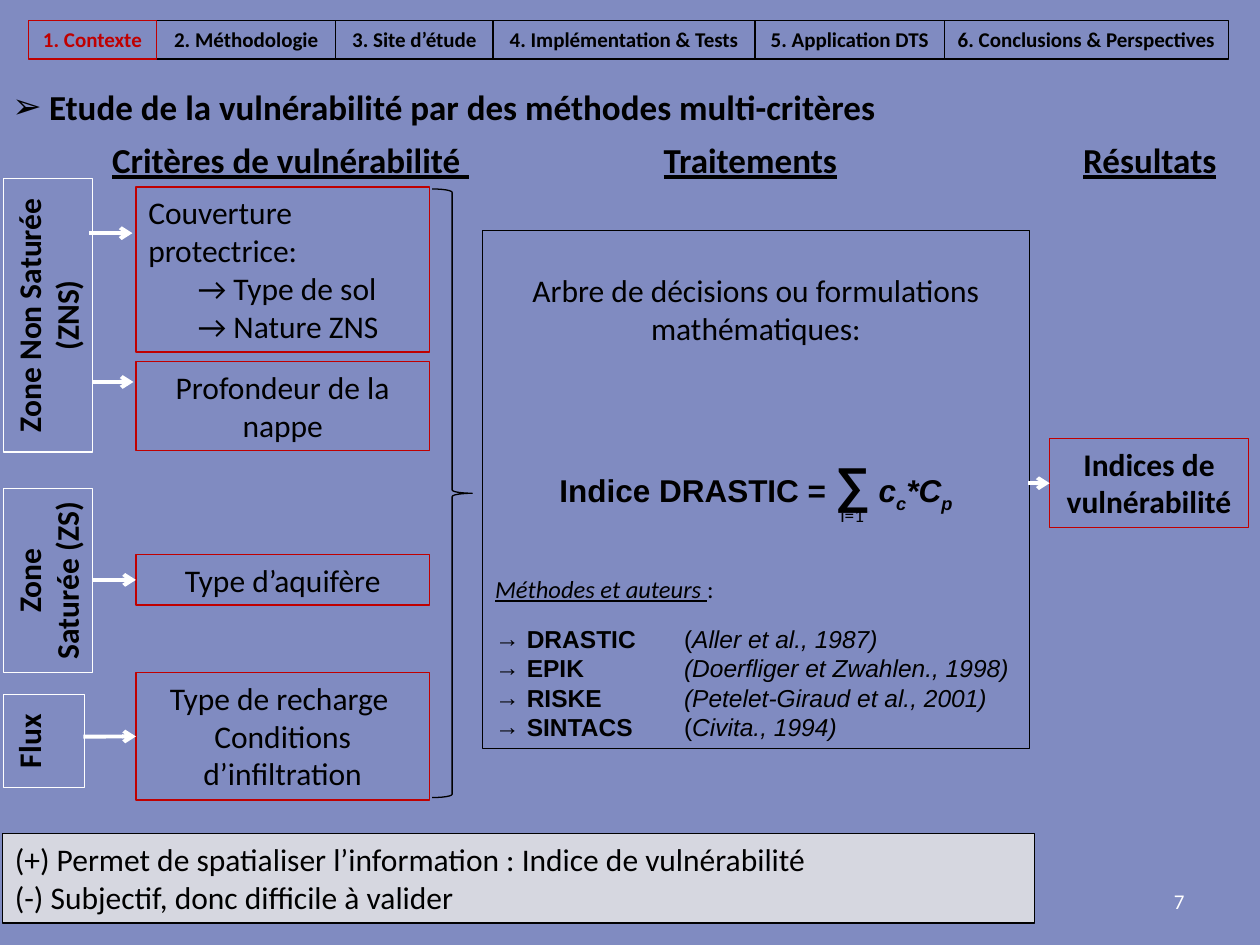
from lxml import etree
from pptx import Presentation
from pptx import util as u
from pptx.dml.color import RGBColor
from pptx.enum import shapes, text
from pptx.oxml import ns

BACKGROUND = RGBColor(0x80, 0x8B, 0xC1)
BLACK = RGBColor(0, 0, 0)
WHITE = RGBColor(255, 255, 255)
RED = RGBColor(0xC0, 0, 0)
GREY = RGBColor(0xD6, 0xD7, 0xE0)
CENTER = text.PP_ALIGN.CENTER
LEFT = text.PP_ALIGN.LEFT
RIGHT = text.PP_ALIGN.RIGHT


def add_xml(parent, tag, **attributes):
    return etree.SubElement(parent, ns.qn(tag), attributes)


class Page:
    def __init__(self, deck):
        self.slide = deck.slides.add_slide(deck.slide_layouts[6])
        fill = self.slide.background.fill
        fill.solid()
        fill.fore_color.rgb = BACKGROUND

    def paragraph(self, frame, content, size=18, font="Calibri", color=BLACK, bold=None,
                  italic=None, underline=None, align=LEFT, before=0, indent=0, bullet=None, tab=None):
        first = frame.paragraphs[0]
        para = frame.add_paragraph() if first.runs else first
        para.alignment = align
        props = para._p.get_or_add_pPr()
        if indent:
            props.set("marL", str(u.Cm(indent)))
        if bullet:
            props.set("indent", str(-u.Cm(indent)))
            add_xml(props, "a:buFont", typeface="Arial")
            add_xml(props, "a:buChar", char=bullet)
        if tab:
            add_xml(add_xml(props, "a:tabLst"), "a:tab", pos=str(u.Cm(tab)), algn="l")
        if before:
            para.space_before = u.Pt(before)
        para.font.size, para.font.name = u.Pt(size), font
        para.font.color.rgb = color
        para.font.bold, para.font.italic, para.font.underline = bold, italic, underline
        for words, style in [(content, {})] if isinstance(content, str) else content:
            span = para.add_run()
            span.text = words
            for name, value in style.items():
                if name == "baseline":
                    span._r.get_or_add_rPr().set(name, str(value))
                else:
                    setattr(span.font, name, value)

    def label(self, left, top, width, height, content, **style):
        box = self.slide.shapes.add_textbox(u.Cm(left), u.Cm(top), u.Cm(width), u.Cm(height))
        box.text_frame.word_wrap = True
        self.paragraph(box.text_frame, content, **style)
        return box

    def shape(self, left, top, width, height, line=BLACK, fill=None, kind=shapes.MSO_SHAPE.RECTANGLE):
        box = self.slide.shapes.add_shape(kind, u.Cm(left), u.Cm(top), u.Cm(width), u.Cm(height))
        box.shadow.inherit = False
        box.line.color.rgb = line
        box.line.width = u.Pt(0.75)
        if fill is None:
            box.fill.background()
        else:
            box.fill.solid()
            box.fill.fore_color.rgb = fill
        return box

    def box(self, left, top, width, height, *lines, line=BLACK, fill=None, wrap=True, **style):
        box = self.shape(left, top, width, height, line, fill)
        box.text_frame.word_wrap = wrap
        box.text_frame.vertical_anchor = text.MSO_ANCHOR.TOP
        for content in lines:
            self.paragraph(box.text_frame, content, **style)
        return box

    def upright_box(self, left, top, width, height, content):
        box = self.box(left + (width - height) / 2, top + (height - width) / 2, height, width,
                       content, line=WHITE, bold=True, align=CENTER)
        box.rotation = 270
        return box

    def arrow(self, start, end, y, target=None):
        arrow = self.slide.shapes.add_connector(
            shapes.MSO_CONNECTOR.STRAIGHT, u.Cm(start), u.Cm(y), u.Cm(end), u.Cm(y))
        if target is not None:
            arrow.end_connect(target, 1)
        arrow.line.color.rgb = WHITE
        arrow.line.width = u.Pt(2.25)
        add_xml(arrow.line._get_or_add_ln(), "a:tailEnd", type="arrow")
        add_xml(arrow._element.spPr, "a:effectLst")


def add_navigation(page):
    sections = [("1. Contexte", 2.59), ("2. Méthodologie", 3.61), ("3. Site d’étude", 3.17),
                ("4. Implémentation & Tests", 5.28), ("5. Application DTS", 3.82),
                ("6. Conclusions & Perspectives", 5.72)]
    right = 0.57 + sum(width for _, width in sections)
    for name, width in reversed(sections):
        right -= width
        color = RED if name == sections[0][0] else BLACK
        page.box(right, 0.42, width, 0.77, name, line=color, color=color,
                 wrap=False, size=12, bold=True, align=CENTER)


def add_criteria(page):
    left, width = 2.74, 5.92
    cover = page.box(left, 3.77, width, 3.33, "Couverture protectrice:", line=RED)
    for detail in ("→ Type de sol", "→ Nature ZNS"):
        page.paragraph(cover.text_frame, detail, indent=1)
    style = dict(line=RED, align=CENTER)
    page.box(left, 7.29, width, 1.8, "Profondeur de la nappe", **style)
    aquifer = page.box(left, 11.18, width, 1.02, "Type d’aquifère", **style)
    recharge = page.box(left, 13.56, width, 2.57, "Type de recharge ",
                        "Conditions d’infiltration", **style)

    page.upright_box(0.07, 3.6, 1.8, 5.51, "Zone Non Saturée (ZNS)")
    page.upright_box(0.07, 9.85, 1.8, 3.71, "Zone Saturée (ZS)")
    page.upright_box(0.07, 14, 1.63, 1.88, "Flux")
    page.arrow(1.8, 2.67, 4.7)
    page.arrow(1.85, 2.69, 7.7)
    page.arrow(1.85, left, 11.69, aquifer)
    page.arrow(1.68, left, 14.85, recharge)
    page.shape(8.71, 3.81, 0.81, 12.27, kind=shapes.MSO_SHAPE.RIGHT_BRACE)


def add_treatment(page):
    treatment = page.box(9.73, 4.65, 11.02, 10.44,
                         "Arbre de décisions ou formulations mathématiques:", align=CENTER)
    frame = treatment.text_frame
    frame.margin_top = u.Cm(0.82)
    italic, subscript = {"italic": True}, {"italic": True, "baseline": -25000}
    page.paragraph(frame, [("Indice DRASTIC = ", {}), ("∑", {"size": u.Pt(28)}), (" ", {}),
                           ("c", italic), ("c", subscript), ("*C", italic), ("p", subscript)],
                   font="Arial", bold=True, align=CENTER, before=61)
    page.paragraph(frame, [("Méthodes et auteurs ", {"italic": True, "underline": True}),
                           (":", {})], size=14, before=34)
    methods = [("DRASTIC", "(", "Aller et al., 1987)"),
               ("EPIK", "", "(Doerfliger et Zwahlen., 1998)"),
               ("RISKE", "", "(Petelet-Giraud et al., 2001)"),
               ("SINTACS", "(", "Civita., 1994)")]
    for row, (method, opening, authors) in enumerate(methods):
        spans = [(method + "\t", {"bold": True}), (opening, {}), (authors, italic)]
        page.paragraph(frame, [span for span in spans if span[0]], size=14, font="Arial",
                       before=0 if row else 12, indent=0.64, bullet="→", tab=3.81)
    page.label(16.69, 10.03, 1.47, 0.74, "i=1", size=11)

    result = page.box(21.16, 8.84, 4.01, 1.8, "Indices de vulnérabilité",
                      line=RED, bold=True, align=CENTER)
    page.arrow(20.73, 21.16, 9.74, result)


def main():
    deck = Presentation()
    deck.slide_width, deck.slide_height = u.Cm(25.4), u.Cm(19.05)
    page = Page(deck)
    number = page.label(18.21, 17.65, 5.92, 1.02, "7", size=12, color=WHITE, align=RIGHT)
    number.text_frame.vertical_anchor = text.MSO_ANCHOR.MIDDLE
    page.label(0, 1.6, 24.97, 1.12, "Etude de la vulnérabilité par des méthodes multi-critères",
               size=20, bold=True, indent=0.74, bullet="➢")
    for left, width, heading, align in [(2.01, 7.82, "Critères de vulnérabilité ", LEFT),
                                        (12.9, 4.45, "Traitements", CENTER),
                                        (20.96, 4.44, "Résultats", CENTER)]:
        page.label(left, 2.67, width, 1.12, heading, size=20, bold=True, underline=True, align=align)
    add_criteria(page)
    add_treatment(page)
    page.box(0.05, 16.81, 20.8, 1.8,
             "(+) Permet de spatialiser l’information : Indice de vulnérabilité",
             "(-) Subjectif, donc difficile à valider", fill=GREY)
    add_navigation(page)
    deck.save("out.pptx")


if __name__ == "__main__":
    main()
